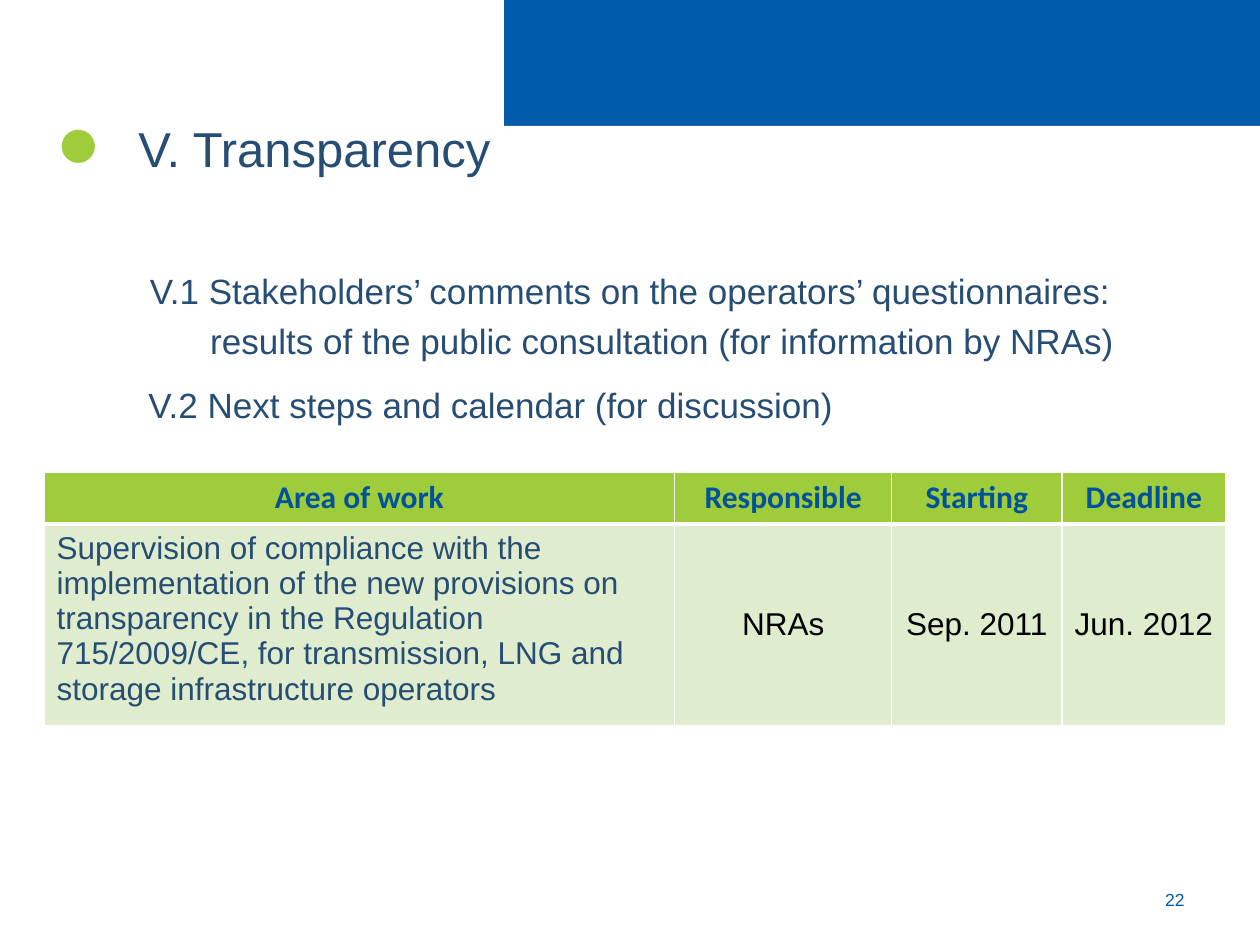
from lxml.etree import SubElement
from pptx import Presentation
from pptx.dml.color import RGBColor
from pptx.enum.shapes import MSO_SHAPE
from pptx.enum.text import MSO_ANCHOR, PP_ALIGN
from pptx.oxml.ns import qn
from pptx.util import Inches, Pt

BLUE = RGBColor(0x00, 0x5B, 0xAB)
HEADER_BLUE = RGBColor(0x00, 0x52, 0x9B)
NAVY = RGBColor(0x26, 0x4D, 0x74)
GREEN = RGBColor(0x9E, 0xCC, 0x3B)
PALE_GREEN = RGBColor(0xDF, 0xEC, 0xCE)
WHITE = RGBColor(0xFF, 0xFF, 0xFF)
BLACK = RGBColor(0x00, 0x00, 0x00)

COLUMNS = [5, 1.72, 1.35, 1.3]
HEADERS = ["Area of work", "Responsible", "Starting", "Deadline"]
WORK = [
    "Supervision of compliance with the implementation of the new provisions "
    "on transparency in the Regulation 715/2009/CE, for transmission, LNG and "
    "storage infrastructure operators",
    "NRAs", "Sep. 2011", "Jun. 2012",
]
AGENDA = [
    ("V.1 Stakeholders’ comments on the operators’ questionnaires: results of "
     "the public consultation (for information by NRAs)", 0.59, -0.48),
    ("V.2 Next steps and calendar (for discussion)", 0.69, -0.59),
]


def add_run(p, text, size, color, font="Arial", bold=False):
    """Add one formatted run to a paragraph."""
    r = p.add_run()
    r.text = text
    r.font.name, r.font.size, r.font.bold = font, Pt(size), bold
    r.font.color.rgb = color


def paint(sp, color):
    """Give a shape a plain fill without line or shadow."""
    sp.fill.solid()
    sp.fill.fore_color.rgb = color
    sp.line.fill.background()
    sp.shadow.inherit = False


def bezier(points, steps=40):
    """Return points along a cubic curve, leaving out its start."""
    curve = []
    for i in range(1, steps + 1):
        t = i / steps
        weights = ((1 - t) ** 3, 3 * t * (1 - t) ** 2, 3 * t * t * (1 - t), t ** 3)
        curve.append(tuple(sum(w * pt[axis] for w, pt in zip(weights, points))
                           for axis in (0, 1)))
    return curve


def add_banner(s, left, top, width, height):
    """Draw the blue band and the white wave that cuts into it."""
    band = s.shapes.add_shape(MSO_SHAPE.RECTANGLE, Inches(left), Inches(top),
                              Inches(width), Inches(height))
    paint(band, BLUE)
    right, bottom = left + width, top + 7.5
    edge = bezier([(right, top + 0.61), (left + 5.1, top + 0.94),
                   (left + 2.76, top + 0.21), (left + 1.31, top + 0.21)])
    edge += bezier([(left + 1.31, top + 0.21), (left + 0.23, top + 0.21),
                    (left + 0.03, top + 0.79), (left, top + 1.1)])
    wave = s.shapes.build_freeform(right, top + 0.61, scale=Inches(1))
    wave.add_line_segments(edge + [(left, bottom), (right, bottom)])
    paint(wave.convert_to_shape(), WHITE)


def add_text(s, left, top, width, height, anchor=MSO_ANCHOR.TOP):
    """Add a wrapping text box and return its text frame."""
    tf = s.shapes.add_textbox(Inches(left), Inches(top), Inches(width),
                              Inches(height)).text_frame
    tf.word_wrap = True
    tf.vertical_anchor = anchor
    return tf


def add_marker(s, left, top, width, height):
    """Place the green dot beside the title."""
    tf = add_text(s, left, top, width, height, MSO_ANCHOR.BOTTOM)
    tf.margin_left = tf.margin_right = 0
    p = tf.paragraphs[0]
    p.alignment = PP_ALIGN.CENTER
    add_run(p, "●", 44, GREEN)


def add_outline(s, left, top, width, height, items, size):
    """Place hanging paragraphs given as text, margin and indent."""
    tf = add_text(s, left, top, width, height)
    for i, (text, margin, indent) in enumerate(items):
        p = tf.add_paragraph() if i else tf.paragraphs[0]
        pPr = p._p.get_or_add_pPr()
        pPr.set("marL", str(Inches(margin)))
        pPr.set("indent", str(Inches(indent)))
        p.line_spacing = 1.2
        p.space_before = Pt(6 if i else 0)
        p.space_after = Pt(2)
        add_run(p, text, size, NAVY)


def set_borders(cell, top, bottom):
    """Draw white cell borders, one point wide at the sides."""
    tcPr = cell._tc.get_or_add_tcPr()
    for i, (side, width) in enumerate([("L", 1), ("R", 1), ("T", top), ("B", bottom)]):
        ln = tcPr.makeelement(qn(f"a:ln{side}"), {"w": str(Pt(width))})
        fill = SubElement(ln, qn("a:solidFill"))
        SubElement(fill, qn("a:srgbClr"), val=str(WHITE))
        tcPr.insert(i, ln)


def fill_cell(cell, text, fill, color, font, bold, align):
    """Write and colour one table cell."""
    cell.fill.solid()
    cell.fill.fore_color.rgb = fill
    p = cell.text_frame.paragraphs[0]
    p.alignment = align
    add_run(p, text, 18, color, font, bold)


def add_work_table(s, left, top, width, height):
    """Place the table of work, responsible body and dates."""
    table = s.shapes.add_table(2, len(COLUMNS), Inches(left), Inches(top),
                               Inches(width), Inches(height)).table
    for column, share in zip(table.columns, COLUMNS):
        column.width = Inches(width * share / sum(COLUMNS))
    table.rows[0].height = Inches(0.41)
    table.rows[1].height = Inches(height - 0.41)
    for c, (header, text) in enumerate(zip(HEADERS, WORK)):
        head, body = table.cell(0, c), table.cell(1, c)
        fill_cell(head, header, GREEN, HEADER_BLUE, "Calibri", True, PP_ALIGN.CENTER)
        set_borders(head, 1, 3)
        fill_cell(body, text, PALE_GREEN, BLACK if c else NAVY, "Arial", False,
                  PP_ALIGN.CENTER if c else PP_ALIGN.LEFT)
        set_borders(body, 3, 1)
        if c:
            body.vertical_anchor = MSO_ANCHOR.MIDDLE


def add_page_number(s, left, top, width, height):
    """Place the page number at the lower right."""
    p = add_text(s, left, top, width, height, MSO_ANCHOR.MIDDLE).paragraphs[0]
    p.alignment = PP_ALIGN.RIGHT
    add_run(p, "22", 10, BLUE)


def main():
    """Build and save the slide."""
    prs = Presentation()
    prs.slide_width, prs.slide_height = Inches(10), Inches(7.5)
    s = prs.slides.add_slide(prs.slide_layouts[6])
    add_banner(s, 0, 0, 10, 1.15)
    add_page_number(s, 8.94, 6.94, 0.56, 0.4)
    add_marker(s, 0.35, 0.57, 0.55, 0.94)
    add_work_table(s, 0.35, 3.75, 9.38, 1.9)
    add_outline(s, 0.9, 0.8, 8.75, 0.61, [("V. Transparency", 0.39, -0.29)], 28)
    add_outline(s, 0.98, 2.02, 8.55, 1.42, AGENDA, 20)
    prs.save("out.pptx")


if __name__ == "__main__":
    main()
